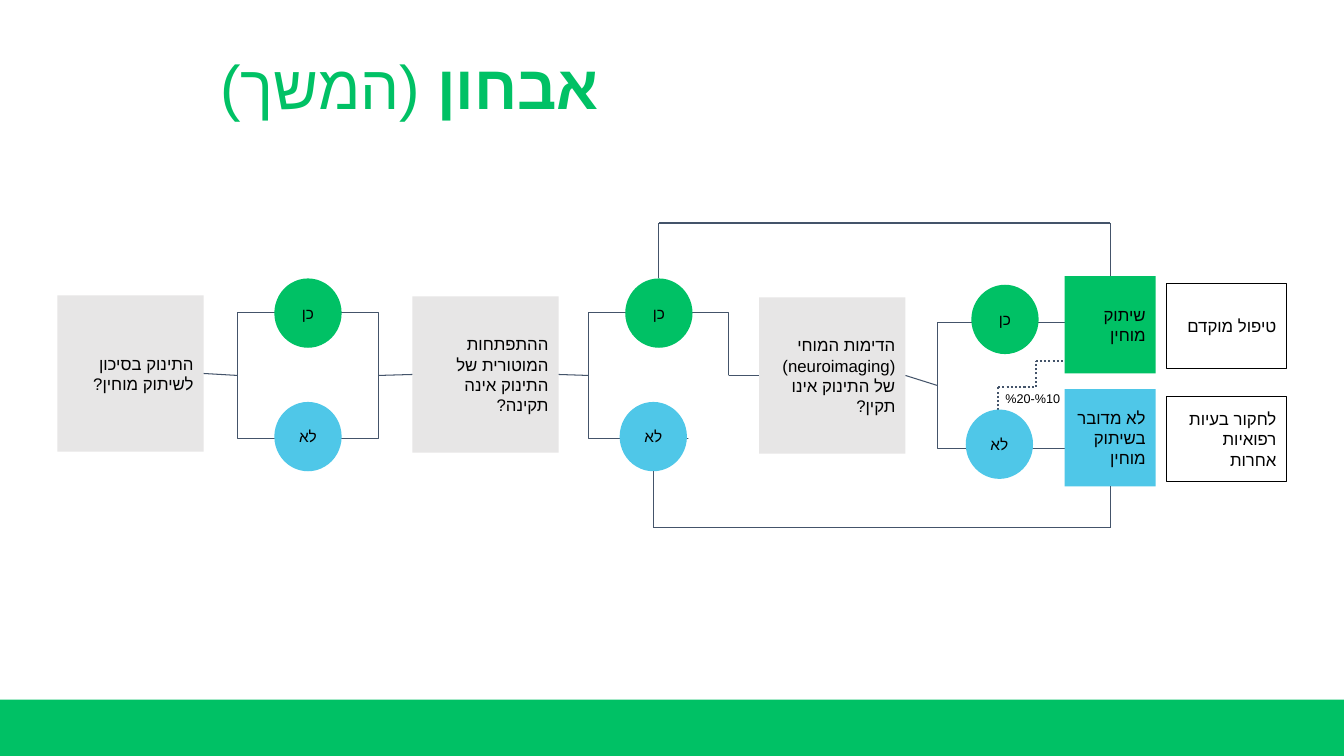
import dataclasses
import itertools

import pptx
import pptx.dml.color
import pptx.enum.dml
import pptx.enum.shapes
import pptx.enum.text
import pptx.oxml.ns
import pptx.util

Shape = pptx.enum.shapes.MSO_SHAPE
Align = pptx.enum.text.PP_ALIGN
TOP, LEFT, BOTTOM, RIGHT = range(4)


@dataclasses.dataclass(frozen=True)
class Theme:
    green: str = "00C165"
    blue: str = "4FC7E8"
    grey: str = "E7E6E6"
    white: str = "FFFFFF"
    black: str = "000000"
    slate: str = "44546A"
    font: str = "Arial"
    title: int = 44
    body: int = 12
    answer: int = 11
    label: int = 9
    thin: float = 0.75
    dotted: float = 1.5
    inset: float = 0.1


@dataclasses.dataclass(frozen=True)
class PercentBox:
    left: float
    top: float
    width: float
    height: float

    def point(self, across, down):
        return self.left + across * self.width, self.top + down * self.height

    def inner(self, across, down, wide, high):
        return PercentBox(*self.point(across, down), wide * self.width, high * self.height)


THEME = Theme()
WIDTH, HEIGHT = pptx.util.Inches(13.33), pptx.util.Inches(7.5)


def to_slide(across, down):
    return round(across * WIDTH / 100), round(down * HEIGHT / 100)


def color(value):
    return pptx.dml.color.RGBColor.from_string(value)


def write(shape, text, *, size=THEME.body, align=Align.RIGHT, fill=THEME.black,
          bold=False, spacing=None, inset=THEME.inset):
    frame = shape.text_frame
    frame.word_wrap = True
    frame.vertical_anchor = pptx.enum.text.MSO_ANCHOR.MIDDLE
    frame.margin_left = frame.margin_right = pptx.util.Inches(THEME.inset)
    frame.margin_top = frame.margin_bottom = pptx.util.Inches(inset)
    para = frame.paragraphs[0]
    para.alignment = align
    para.line_spacing = spacing
    para._p.get_or_add_pPr().set("rtl", "1")
    span = para.add_run()
    span.text = text
    span.font.size = pptx.util.Pt(size)
    span.font.name = THEME.font
    span.font.bold = bold
    span.font.color.rgb = color(fill)
    properties = span._r.get_or_add_rPr()
    complex_font = properties.makeelement(pptx.oxml.ns.qn("a:cs"), {"typeface": THEME.font})
    properties.append(complex_font)


def draw(page, box, kind=Shape.RECTANGLE, fill=None, outline=None):
    shape = page.shapes.add_shape(
        kind, *to_slide(box.left, box.top), *to_slide(box.width, box.height))
    shape.shadow.inherit = False
    if fill:
        shape.fill.solid()
        shape.fill.fore_color.rgb = color(fill)
    else:
        shape.fill.background()
    if outline:
        shape.line.color.rgb = color(outline)
        shape.line.width = pptx.util.Pt(THEME.thin)
    else:
        shape.line.fill.background()
    return shape


def text_area(page, box):
    return page.shapes.add_textbox(
        *to_slide(box.left, box.top), *to_slide(box.width, box.height))


def link(page, start=(0, 0), end=(0, 0), dotted=False):
    line = page.shapes.add_connector(
        pptx.enum.shapes.MSO_CONNECTOR.STRAIGHT, *to_slide(*start), *to_slide(*end))
    line.line.color.rgb = color(THEME.slate)
    line.line.width = pptx.util.Pt(THEME.dotted if dotted else THEME.thin)
    if dotted:
        line.line.dash_style = pptx.enum.dml.MSO_LINE.ROUND_DOT
    properties = line._element.spPr
    properties.append(properties.makeelement(pptx.oxml.ns.qn("a:effectLst"), {}))
    return line


def join(page, first, second):
    line = link(page)
    line.begin_connect(first, RIGHT)
    line.end_connect(second, LEFT)


def trail(page, points, dotted=False):
    return [link(page, start, end, dotted) for start, end in itertools.pairwise(points)]


def header(page, box):
    title = text_area(page, box)
    look = dict(size=THEME.title, fill=THEME.green, spacing=0.9, inset=0.05)
    write(title, "אבחון ", bold=True, **look)
    write(title, "(המשך)", **look)


def exception(page, box):
    trail(page, [box.point(0, 1), box.point(0, 0.39), box.point(0.54, 0.39),
                 box.point(0.54, 0), box.point(1, 0)], dotted=True)
    write(text_area(page, box.inner(-0.29, 0.38, 1.32, 0.35)), "%10-%20", size=THEME.label)


def decision(page, text, box, fork_box, yes_place, no_place, mask=None):
    fork = draw(page, fork_box, outline=THEME.slate)
    if mask:
        draw(page, fork_box.inner(*mask), fill=THEME.white)
    question = draw(page, box, fill=THEME.grey)
    write(question, text)
    join(page, question, fork)
    circles = []
    for word, place, fill in (("כן", yes_place, THEME.green), ("לא", no_place, THEME.blue)):
        circle_box = fork_box.inner(*place, 0.48, 0.55)
        circle = draw(page, circle_box, Shape.OVAL, fill)
        write(circle, word, size=THEME.answer, align=Align.CENTER)
        circles.append(circle_box)
    return question, fork, circles


def outcome(page, box, fill, result, action):
    result_shape = draw(page, box.inner(0, 0, 0.41, 1), fill=fill)
    write(result_shape, result)
    action_box = box.inner(0.46, 0.08, 0.54, 0.87)
    write(draw(page, action_box, fill=THEME.white, outline=THEME.black), action)
    return result_shape


def detour(page, start, rail, box, result, side):
    across = box.point(0.205, 0)[0]
    lines = trail(page, [start, (start[0], rail), (across, rail), (across, box.top)])
    lines[-1].end_connect(result, side)


def flow(page):
    stages = [
        ("התינוק בסיכון לשיתוק מוחין?", PercentBox(4.28, 39.07, 10.88, 20.67),
         PercentBox(17.7, 41.33, 10.43, 16.67), (0.26, -0.27), (0.26, 0.71)),
        ("ההתפתחות המוטורית של התינוק אינה תקינה?", PercentBox(30.68, 39.2, 10.88, 20.67),
         PercentBox(43.81, 41.33, 10.43, 16.67), (0.26, -0.27), (0.22, 0.71),
         (0.71, 0.5, 0.48, 0.67)),
        ("הדימות המוחי (neuroimaging) של התינוק אינו תקין?",
         PercentBox(56.49, 39.33, 10.88, 20.67), PercentBox(69.77, 42.67, 10.43, 16.67),
         (0.24, -0.3), (0.2, 0.69), (0.92, -0.2, 0.24, 1.23)),
    ]
    exception(page, PercentBox(74.27, 47.8, 5.18, 8.73))
    drawn = [decision(page, *stage) for stage in stages]
    for (_, fork, _), (question, _, _) in itertools.pairwise(drawn):
        join(page, fork, question)

    upper_box = PercentBox(79.22, 36.53, 16.5, 12.87)
    lower_box = PercentBox(79.22, 51.47, 16.5, 12.87)
    palsy = outcome(page, upper_box, THEME.green, "שיתוק מוחין", "טיפול מוקדם")
    other = outcome(page, lower_box, THEME.blue, "לא מדובר בשיתוק מוחין",
                    "לחקור בעיות רפואיות אחרות")
    yes_box, no_box = drawn[1][2]
    detour(page, yes_box.point(0.5, 0), 29.5, upper_box, palsy, TOP)
    detour(page, no_box.point(0.5, 1), 69.8, lower_box, other, BOTTOM)


def main():
    deck = pptx.Presentation()
    deck.slide_width, deck.slide_height = WIDTH, HEIGHT
    page = deck.slides.add_slide(deck.slide_layouts[6])
    draw(page, PercentBox(0, 92.53, 100, 7.47), fill=THEME.green)
    header(page, PercentBox(4.28, 6.67, 41.04, 10.4))
    flow(page)
    deck.save("out.pptx")


if __name__ == "__main__":
    main()
